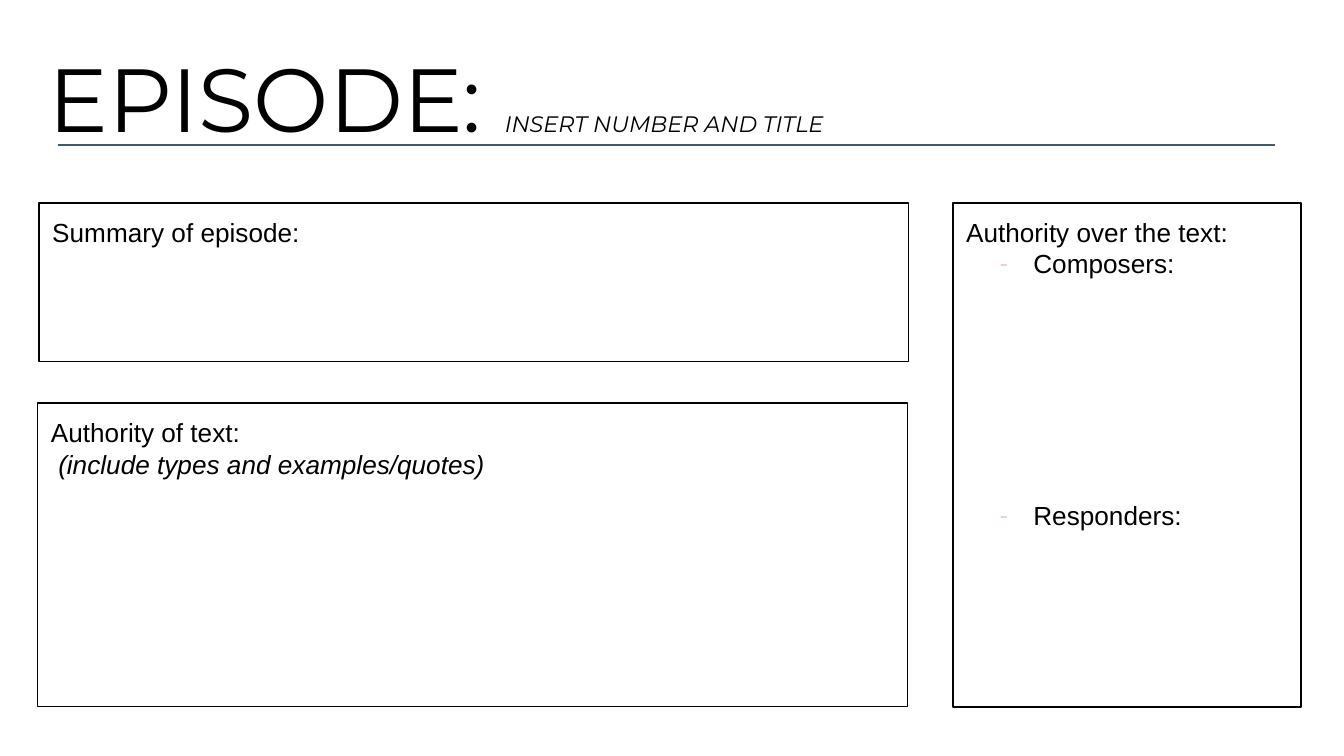
from typing import NamedTuple

from lxml.etree import SubElement
from pptx import Presentation
from pptx.dml.color import RGBColor
from pptx.enum.shapes import MSO_CONNECTOR, MSO_SHAPE
from pptx.enum.text import MSO_ANCHOR, MSO_AUTO_SIZE, PP_ALIGN
from pptx.oxml.ns import qn
from pptx.util import Pt

BLACK = "000000"
TEAL = "425968"
PINK = "EAD1DC"
INSET = 7.2


class Run(NamedTuple):
    text: str
    size: float = 14
    italic: bool = False
    font: str = "Arial"


class Para(NamedTuple):
    runs: list[Run]
    bullet: str = ""
    space_before: float = 0


class Panel(NamedTuple):
    left: float
    top: float
    width: float
    height: float
    paras: list[Para]


TITLE = Para([
    Run("EPISODE: ", 48, font="Montserrat"),
    Run("INSERT NUMBER AND TITLE", 12, True, "Montserrat"),
])

PANELS = [
    Panel(20.2, 216, 466, 162.7, [
        Para([Run("Authority of text:")]),
        Para([Run(" "), Run("(include types and examples/quotes)", italic=True)]),
    ]),
    Panel(20.9, 108.7, 466, 85, [Para([Run("Summary of episode:")])]),
    Panel(510.5, 108.7, 186.5, 270, [
        Para([Run("Authority over the text:")]),
        Para([Run("Composers:")], "-"),
        Para([Run("Responders:")], "-", 118),
    ]),
]


def rgb(value: str) -> RGBColor:
    return RGBColor.from_string(value)


def add_bullet(p, char: str) -> None:
    pPr = p._p.get_or_add_pPr()
    pPr.set("marL", str(Pt(36)))
    pPr.set("indent", str(Pt(-18)))
    color = SubElement(pPr, qn("a:buClr"))
    SubElement(color, qn("a:srgbClr"), val=PINK)
    SubElement(pPr, qn("a:buFont"), typeface="Arial")
    SubElement(pPr, qn("a:buChar"), char=char)


def write_text(tf, paras: list[Para], anchor: MSO_ANCHOR) -> None:
    tf.word_wrap = True
    tf.auto_size = MSO_AUTO_SIZE.NONE
    tf.vertical_anchor = anchor
    tf.margin_left = tf.margin_right = Pt(INSET)
    tf.margin_top = tf.margin_bottom = Pt(INSET)
    for i, para in enumerate(paras):
        p = tf.add_paragraph() if i else tf.paragraphs[0]
        p.alignment = PP_ALIGN.LEFT
        p.space_before = Pt(para.space_before)
        if para.bullet:
            add_bullet(p, para.bullet)
        for run in para.runs:
            r = p.add_run()
            r.text = run.text
            r.font.name = run.font
            r.font.size = Pt(run.size)
            r.font.italic = run.italic
            r.font.color.rgb = rgb(BLACK)


def add_rule(s, left: float, right: float, y: float) -> None:
    line = s.shapes.add_connector(
        MSO_CONNECTOR.STRAIGHT, Pt(left), Pt(y), Pt(right), Pt(y))
    line.line.color.rgb = rgb(TEAL)
    line.line.width = Pt(1)
    SubElement(line._element.spPr, qn("a:effectLst"))


def add_title(s) -> None:
    sp = s.shapes.title
    sp.left, sp.top, sp.width, sp.height = Pt(18.7), Pt(9.4), Pt(491.8), Pt(85)
    write_text(sp.text_frame, [TITLE], MSO_ANCHOR.MIDDLE)


def add_panel(s, panel: Panel) -> None:
    sp = s.shapes.add_shape(
        MSO_SHAPE.RECTANGLE, Pt(panel.left), Pt(panel.top),
        Pt(panel.width), Pt(panel.height))
    sp.shadow.inherit = False
    sp.fill.background()
    sp.line.color.rgb = rgb(BLACK)
    sp.line.width = Pt(0.75)
    write_text(sp.text_frame, panel.paras, MSO_ANCHOR.TOP)


def main() -> None:
    prs = Presentation()
    prs.slide_width, prs.slide_height = Pt(720), Pt(405)
    s = prs.slides.add_slide(prs.slide_layouts[5])
    add_rule(s, 31, 683.3, 77.8)
    add_title(s)
    for panel in PANELS:
        add_panel(s, panel)
    prs.save("out.pptx")


if __name__ == "__main__":
    main()
